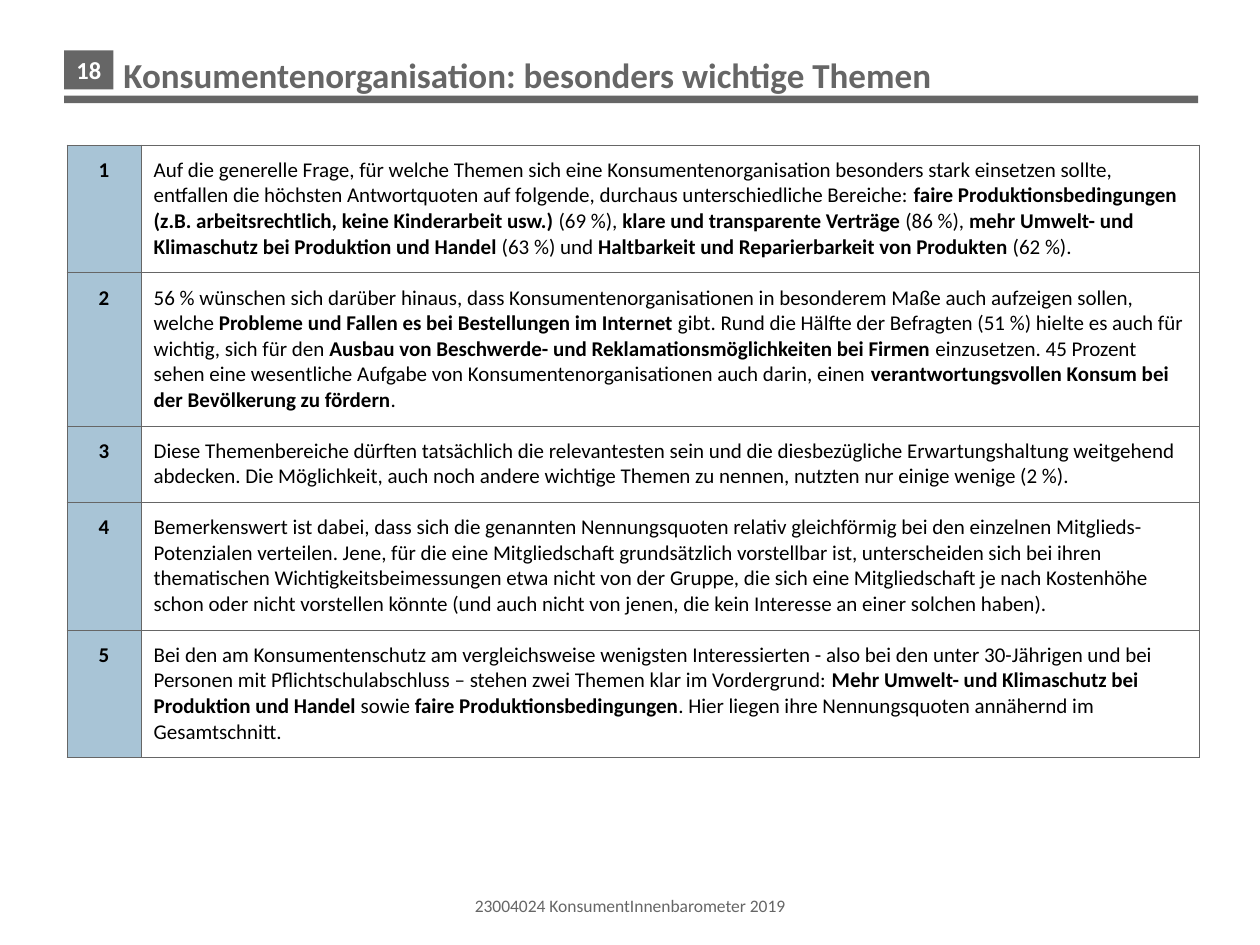
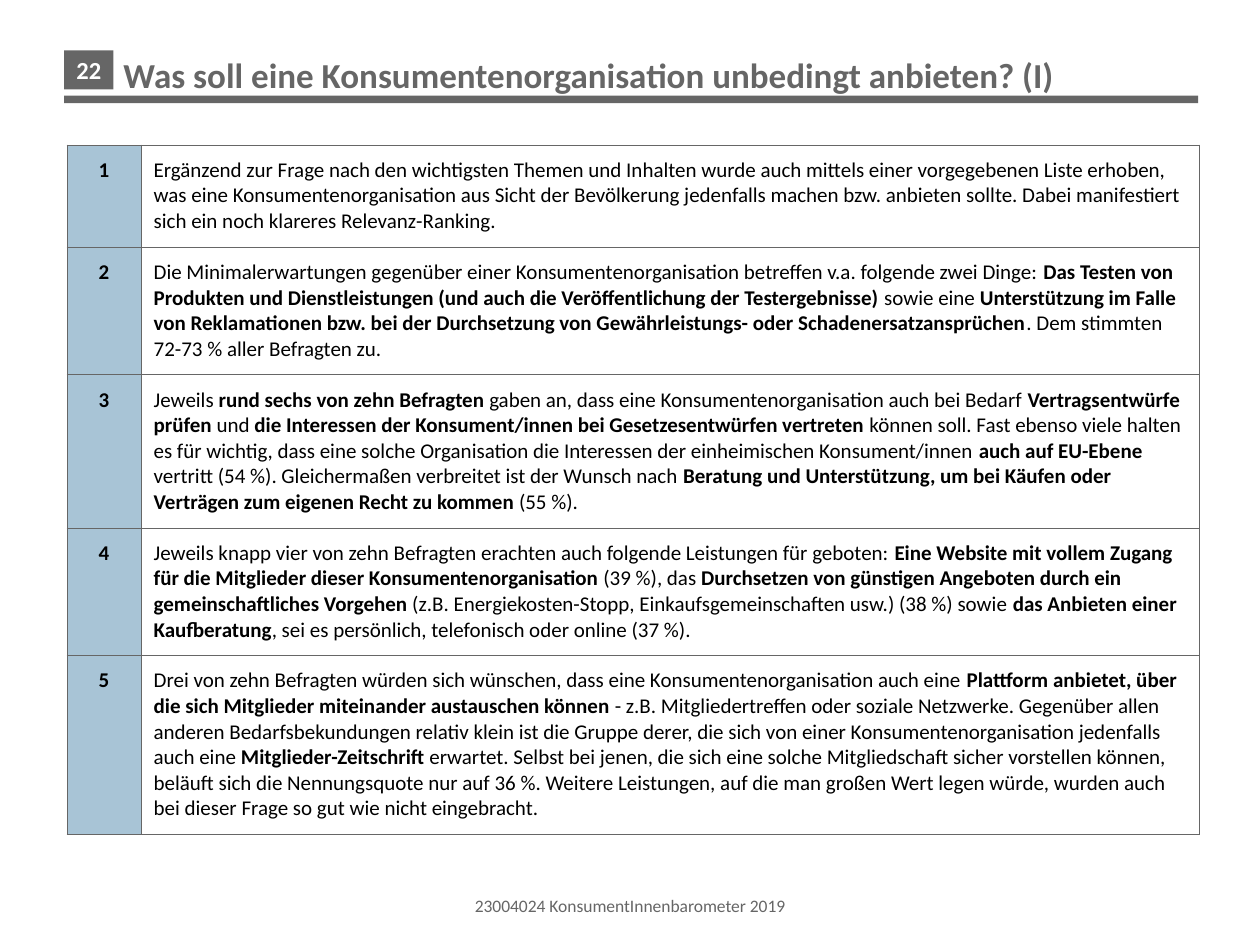
import pptx
import pptx.util
import pptx.dml.color
import pptx.enum.shapes
import pptx.enum.text
import pptx.oxml
import pptx.oxml.ns

FONT = "Calibri"
GREY, BLUE, BLACK, WHITE = "666666", "A8C4D6", "000000", "FFFFFF"
FOOTER = "23004024 KonsumentInnenbarometer 2019"

COL = pptx.util.Inches(10) / 100
ROW = pptx.util.Inches(7.5) / 100
BADGE_BOX = (5.1, 5.33, 3.9, 4.13)
RULE_BOX = (5.1, 10.13, 90, 0.8)
TITLE_BOX = (8.8, 4.8, 86.7, 6.27)
TABLE_BOX = (5.3, 15.33, 89.9, 64)
FOOTER_BOX = (5.2, 93.47, 89.6, 4.8)
NUMBER_COLS = 5.9
LINE_ROWS = 2.71
CELL_INSET = pptx.util.Inches(0.1)

CENTER = pptx.enum.text.PP_ALIGN.CENTER
LEFT = pptx.enum.text.PP_ALIGN.LEFT
MIDDLE = pptx.enum.text.MSO_ANCHOR.MIDDLE
SHAPE = pptx.enum.shapes.MSO_SHAPE

TOPICS = [
    (4, "Auf die generelle Frage, für welche Themen sich eine Konsumentenorganisation besonders stark "
        "einsetzen sollte, entfallen die höchsten Antwortquoten auf folgende, durchaus unterschiedliche "
        "Bereiche: **faire Produktionsbedingungen (z.B. arbeitsrechtlich, keine Kinderarbeit usw.) **(69 %), "
        "**klare und transparente Verträge **(86 %), **mehr Umwelt- und Klimaschutz bei Produktion und "
        "Handel **(63 %) und **Haltbarkeit und Reparierbarkeit von Produkten **(62 %)."),
    (5, "56 % wünschen sich darüber hinaus, dass Konsumentenorganisationen in besonderem Maße auch "
        "aufzeigen sollen, welche **Probleme und Fallen es bei Bestellungen im Internet **gibt. Rund die "
        "Hälfte der Befragten (51 %) hielte es auch für wichtig, sich für den **Ausbau von Beschwerde- und "
        "Reklamationsmöglichkeiten bei Firmen **einzusetzen. 45 Prozent sehen eine wesentliche Aufgabe von "
        "Konsumentenorganisationen auch darin, einen **verantwortungsvollen Konsum bei der Bevölkerung zu "
        "fördern**."),
    (2, "Diese Themenbereiche dürften tatsächlich die relevantesten sein und die diesbezügliche "
        "Erwartungshaltung weitgehend abdecken. Die Möglichkeit, auch noch andere wichtige Themen zu nennen, "
        "nutzten nur einige wenige (2 %)."),
    (4, "Bemerkenswert ist dabei, dass sich die genannten Nennungsquoten relativ gleichförmig bei den "
        "einzelnen Mitglieds-Potenzialen verteilen. Jene, für die eine Mitgliedschaft grundsätzlich "
        "vorstellbar ist, unterscheiden sich bei ihren thematischen Wichtigkeitsbeimessungen etwa nicht von "
        "der Gruppe, die sich eine Mitgliedschaft je nach Kostenhöhe schon oder nicht vorstellen könnte (und "
        "auch nicht von jenen, die kein Interesse an einer solchen haben)."),
    (4, "Bei den am Konsumentenschutz am vergleichsweise wenigsten Interessierten - also bei den unter "
        "30-Jährigen und bei Personen mit Pflichtschulabschluss – stehen zwei Themen klar im Vordergrund: "
        "**Mehr Umwelt- und Klimaschutz bei Produktion und Handel **sowie **faire Produktionsbedingungen**. "
        "Hier liegen ihre Nennungsquoten annähernd im Gesamtschnitt."),
]

SERVICES = [
    (3, "Ergänzend zur Frage nach den wichtigsten Themen und Inhalten wurde auch mittels einer vorgegebenen "
        "Liste erhoben, was eine Konsumentenorganisation aus Sicht der Bevölkerung jedenfalls machen bzw. "
        "anbieten sollte. Dabei manifestiert sich ein noch klareres Relevanz-Ranking."),
    (4, "Die Minimalerwartungen gegenüber einer Konsumentenorganisation betreffen v.a. folgende zwei Dinge: "
        "**Das Testen von Produkten und Dienstleistungen (und auch die Veröffentlichung der Testergebnisse) "
        "**sowie eine **Unterstützung im Falle von Reklamationen bzw. bei der Durchsetzung von "
        "Gewährleistungs- oder Schadenersatzansprüchen**. Dem stimmten 72-73 % aller Befragten zu."),
    (5, "Jeweils **rund sechs von zehn Befragten **gaben an, dass eine Konsumentenorganisation auch bei "
        "Bedarf **Vertragsentwürfe prüfen** und **die Interessen der Konsument/innen bei Gesetzesentwürfen "
        "vertreten **können soll. Fast ebenso viele halten es für wichtig, dass eine solche Organisation die "
        "Interessen der einheimischen Konsument/innen **auch auf EU-Ebene **vertritt (54 %). Gleichermaßen "
        "verbreitet ist der Wunsch nach **Beratung und Unterstützung, um bei Käufen oder Verträgen zum "
        "eigenen Recht zu kommen **(55 %)."),
    (4, "Jeweils knapp vier von zehn Befragten erachten auch folgende Leistungen für geboten: **Eine Website "
        "mit vollem Zugang für die Mitglieder dieser Konsumentenorganisation** (39 %), das **Durchsetzen von "
        "günstigen Angeboten durch ein gemeinschaftliches Vorgehen** (z.B. Energiekosten-Stopp, "
        "Einkaufsgemeinschaften usw.) (38 %) sowie **das Anbieten einer Kaufberatung**, sei es persönlich, "
        "telefonisch oder online (37 %)."),
    (6, "Drei von zehn Befragten würden sich wünschen, dass eine Konsumentenorganisation auch eine "
        "**Plattform anbietet, über die sich Mitglieder miteinander austauschen können** - z.B. "
        "Mitgliedertreffen oder soziale Netzwerke. Gegenüber allen anderen Bedarfsbekundungen relativ klein "
        "ist die Gruppe derer, die sich von einer Konsumentenorganisation jedenfalls auch eine "
        "**Mitglieder-Zeitschrift** erwartet. Selbst bei jenen, die sich eine solche Mitgliedschaft sicher "
        "vorstellen können, beläuft sich die Nennungsquote nur auf 36 %. Weitere Leistungen, auf die man "
        "großen Wert legen würde, wurden auch bei dieser Frage so gut wie nicht eingebracht."),
]


def rgb(color):
    return pptx.dml.color.RGBColor.from_string(color)


def place(box):
    x, y, w, h = box
    return [round(v) for v in (x * COL, y * ROW, w * COL, h * ROW)]


def write(tf, text, size, color, align=LEFT):
    p = tf.paragraphs[0]
    p.alignment = align
    for i, part in enumerate(text.split("**")):
        if part:
            r = p.add_run()
            r.text = part
            r.font.name = FONT
            r.font.size = pptx.util.Pt(size)
            r.font.bold = i % 2 == 1
            r.font.color.rgb = rgb(color)


def add_block(s, box, fill=None, kind=SHAPE.RECTANGLE):
    sp = s.shapes.add_shape(kind, *place(box))
    sp.shadow.inherit = False
    sp.line.fill.background()
    if fill:
        sp.fill.solid()
        sp.fill.fore_color.rgb = rgb(fill)
    else:
        sp.fill.background()
    sp.text_frame.word_wrap = False
    sp.text_frame.vertical_anchor = MIDDLE
    return sp


def add_header(s, number, title):
    badge = add_block(s, BADGE_BOX, GREY)
    write(badge.text_frame, f"**{number}", 14, WHITE, CENTER)
    add_block(s, RULE_BOX, GREY)
    sp = s.shapes.title
    sp.left, sp.top, sp.width, sp.height = place(TITLE_BOX)
    tf = sp.text_frame
    tf.auto_size = pptx.enum.text.MSO_AUTO_SIZE.NONE
    tf.vertical_anchor = MIDDLE
    write(tf, f"**{title}", 20, GREY)


def add_footer(s):
    sp = add_block(s, FOOTER_BOX, kind=SHAPE.ROUNDED_RECTANGLE)
    write(sp.text_frame, FOOTER, 10, GREY, CENTER)


def set_borders(cell):
    tc_pr = cell._tc.get_or_add_tcPr()
    for i, side in enumerate("LRTB"):
        tc_pr.insert(i, pptx.oxml.parse_xml(
            f'<a:ln{side} {pptx.oxml.ns.nsdecls("a")} w="{pptx.util.Pt(0.25)}">'
            f'<a:solidFill><a:srgbClr val="{GREY}"/></a:solidFill></a:ln{side}>'))


def fill_cell(cell, text, align=LEFT, fill=None):
    cell.margin_left = cell.margin_right = CELL_INSET
    cell.margin_top = cell.margin_bottom = CELL_INSET
    if fill:
        cell.fill.solid()
        cell.fill.fore_color.rgb = rgb(fill)
    else:
        cell.fill.background()
    set_borders(cell)
    write(cell.text_frame, text, 12, BLACK, align)


def add_findings(s, box, findings):
    table = s.shapes.add_table(len(findings), 2, *place(box)).table
    table.first_row = table.horz_banding = False
    table.columns[0].width = round(NUMBER_COLS * COL)
    table.columns[1].width = round((box[2] - NUMBER_COLS) * COL)
    for i, (lines, text) in enumerate(findings):
        table.rows[i].height = round(lines * LINE_ROWS * ROW) + 2 * CELL_INSET
        fill_cell(table.cell(i, 0), f"**{i + 1}", CENTER, BLUE)
        fill_cell(table.cell(i, 1), text)


def add_findings_slide(prs, number, title, findings):
    s = prs.slides.add_slide(prs.slide_layouts.get_by_name("Title Only"))
    add_header(s, number, title)
    add_findings(s, TABLE_BOX, findings)
    add_footer(s)


def main():
    prs = pptx.Presentation()
    prs.slide_width = round(100 * COL)
    prs.slide_height = round(100 * ROW)
    add_findings_slide(prs, 18, "Konsumentenorganisation: besonders wichtige Themen", TOPICS)
    add_findings_slide(prs, 22, "Was soll eine Konsumentenorganisation unbedingt anbieten? (I)", SERVICES)
    prs.save("out.pptx")


if __name__ == "__main__":
    main()
